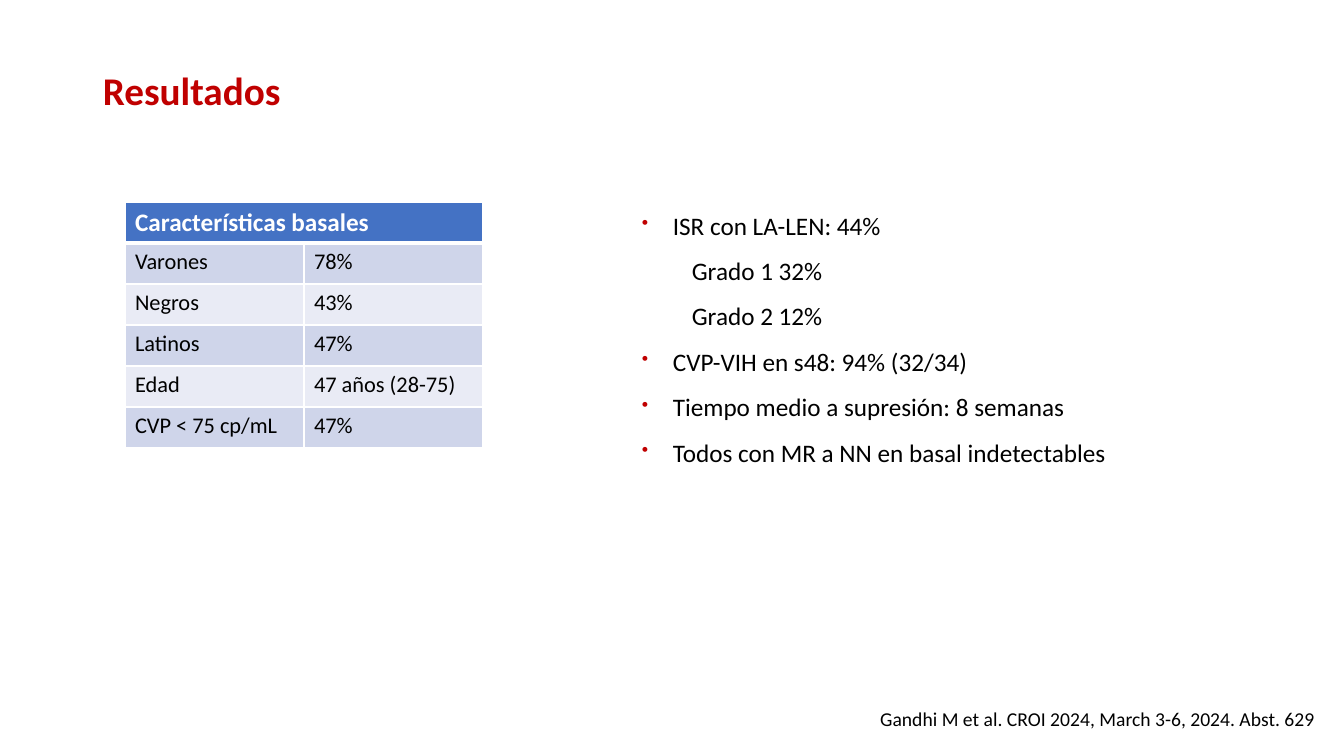
import pptx
import pptx.util
import pptx.dml.color
import pptx.enum.text
import pptx.oxml.ns
import lxml.etree

RGB = pptx.dml.color.RGBColor
RED = RGB(0xC0, 0x00, 0x00)
BLACK = RGB(0x00, 0x00, 0x00)
WHITE = RGB(0xFF, 0xFF, 0xFF)
HEADER_BLUE = RGB(0x44, 0x72, 0xC4)
BANDS = [RGB(0xCF, 0xD5, 0xEA), RGB(0xE9, 0xEB, 0xF5)]
FONT = "Calibri"

TITLE = "Resultados"
TABLE_HEADER = "Características basales"
BASELINE = [
    ("Varones", "78%"),
    ("Negros", "43%"),
    ("Latinos", "47%"),
    ("Edad", "47 años (28-75)"),
    ("CVP < 75 cp/mL", "47%"),
]
FINDINGS = [
    (0, "ISR con LA-LEN: 44%"),
    (1, "Grado 1 32%"),
    (1, "Grado 2 12%"),
    (0, "CVP-VIH en s48: 94% (32/34)"),
    (0, "Tiempo medio a supresión: 8 semanas"),
    (0, "Todos con MR a NN en basal indetectables"),
]
CITATION = "Gandhi M et al. CROI 2024, March 3-6, 2024. Abst. 629"

TITLE_BOX = (93, 40, 1159, 106)
FINDINGS_BOX = (632, 190, 544, 315)
CITATION_BOX = (682, 702, 643, 34)
TABLE_LEFT, TABLE_TOP, COL_W, ROW_H = 125, 202, 179, 41
BULLET_INDENT, SUB_INDENT = 31, 50


def px(n):
    return pptx.util.Emu(round(n * 914400 / 100.8))


def add_run(p, text, size, color=BLACK, bold=False):
    r = p.add_run()
    r.text = text
    r.font.name = FONT
    r.font.size = pptx.util.Pt(size)
    r.font.bold = bold
    r.font.color.rgb = color


def add_box(slide, box):
    tf = slide.shapes.add_textbox(*map(px, box)).text_frame
    tf.word_wrap = True
    return tf


def add_element(parent, tag, **attrs):
    el = lxml.etree.SubElement(parent, pptx.oxml.ns.qn(tag))
    for name, value in attrs.items():
        el.set(name, str(value))
    return el


def format_bullet(p, level):
    pPr = p._p.get_or_add_pPr()
    if level:
        pPr.set("marL", str(px(SUB_INDENT)))
        pPr.set("indent", "0")
        add_element(pPr, "a:buNone")
        return
    pPr.set("marL", str(px(BULLET_INDENT)))
    pPr.set("indent", str(-px(BULLET_INDENT)))
    add_element(add_element(pPr, "a:buClr"), "a:srgbClr", val=RED)
    add_element(pPr, "a:buSzPct", val=75000)
    add_element(pPr, "a:buChar", char="•")


def format_cell(cell, fill, top, bottom):
    tcPr = cell._tc.get_or_add_tcPr()
    for side, width in (("L", 1), ("R", 1), ("T", top), ("B", bottom)):
        ln = add_element(tcPr, f"a:ln{side}", w=pptx.util.Pt(width))
        add_element(add_element(ln, "a:solidFill"), "a:srgbClr", val=WHITE)
    cell.fill.solid()
    cell.fill.fore_color.rgb = fill


def add_baseline_table(slide):
    rows = len(BASELINE) + 1
    table = slide.shapes.add_table(
        rows, 2, px(TABLE_LEFT), px(TABLE_TOP), px(2 * COL_W), px(rows * ROW_H)
    ).table
    for col in table.columns:
        col.width = px(COL_W)
    for row in table.rows:
        row.height = px(ROW_H)
    for c in range(2):
        format_cell(table.cell(0, c), HEADER_BLUE, 1, 3)
    table.cell(0, 0).merge(table.cell(0, 1))
    p = table.cell(0, 0).text_frame.paragraphs[0]
    add_run(p, TABLE_HEADER, 18, WHITE, True)
    for i, values in enumerate(BASELINE):
        for c, value in enumerate(values):
            cell = table.cell(i + 1, c)
            format_cell(cell, BANDS[i % 2], 1 if i else 3, 1)
            add_run(cell.text_frame.paragraphs[0], value, 16)


def main():
    prs = pptx.Presentation()
    prs.slide_width, prs.slide_height = px(1344), px(756)
    s = prs.slides.add_slide(prs.slide_layouts[6])

    tf = add_box(s, TITLE_BOX)
    tf.vertical_anchor = pptx.enum.text.MSO_ANCHOR.MIDDLE
    p = tf.paragraphs[0]
    p.line_spacing = 0.9
    add_run(p, TITLE, 28, RED, True)

    add_baseline_table(s)

    tf = add_box(s, FINDINGS_BOX)
    for i, (level, text) in enumerate(FINDINGS):
        p = tf.add_paragraph() if i else tf.paragraphs[0]
        p.level = level
        p.line_spacing = 1.5
        format_bullet(p, level)
        add_run(p, text, 18)

    p = add_box(s, CITATION_BOX).paragraphs[0]
    p.alignment = pptx.enum.text.PP_ALIGN.RIGHT
    add_run(p, CITATION, 14)

    prs.save("out.pptx")


if __name__ == "__main__":
    main()
